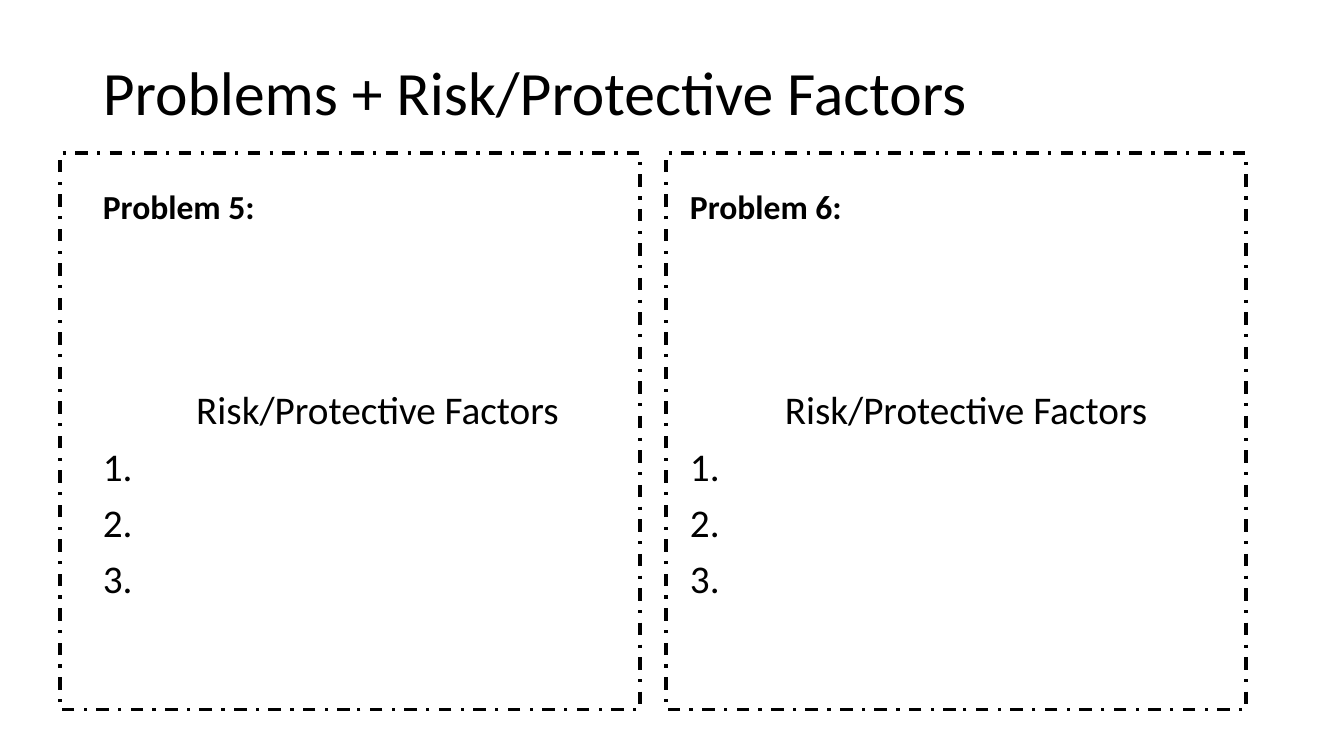
from lxml import etree
from pptx import Presentation
from pptx.dml.color import RGBColor
from pptx.enum.dml import MSO_LINE
from pptx.enum.shapes import MSO_SHAPE
from pptx.enum.text import MSO_ANCHOR, PP_ALIGN
from pptx.oxml.ns import qn
from pptx.util import Emu, Pt

RECT = MSO_SHAPE.RECTANGLE
DASH_DOT = MSO_LINE.DASH_DOT
TOP, MIDDLE = MSO_ANCHOR.TOP, MSO_ANCHOR.MIDDLE
LEFT, CENTER = PP_ALIGN.LEFT, PP_ALIGN.CENTER
PX = 914400 / 100.8
BLACK = "000000"
NUMBER_INDENT = 56


def px(*lengths):
    return [Emu(round(n * PX)) for n in lengths]


def add_text(box, lines, size, bold=False, align=LEFT, anchor=TOP, before=10):
    tf = s.shapes.add_textbox(*px(*box)).text_frame
    tf.word_wrap = True
    tf.vertical_anchor = anchor
    tf.text = "\n".join(lines)
    for p in tf.paragraphs:
        p.alignment = align
        p.line_spacing = 0.9
        p.space_before = Pt(before)
        p.font.name = "Calibri"
        p.font.size = Pt(size)
        p.font.bold = bold
        p.font.color.rgb = RGBColor.from_string(BLACK)
    return tf


prs = Presentation()
prs.slide_width, prs.slide_height = px(1344, 756)
s = prs.slides.add_slide(prs.slide_layouts[6])

add_text((93, 23, 1159, 146), ["Problems + Risk/Protective Factors"], 44,
         anchor=MIDDLE, before=0)

columns = [("Problem 5:", 93, 569, 60), ("Problem 6:", 680, 572, 666)]
for heading, left, width, frame_left in columns:
    add_text((left, 185, width, 201), [heading], 24, bold=True)

    tf = add_text((left, 386, width, 296),
                  ["Risk/Protective Factors", " ", " ", " "], 28, align=CENTER)
    for p in tf.paragraphs[1:]:
        p.alignment = LEFT
        pPr = p._p.get_or_add_pPr()
        indent = px(NUMBER_INDENT)[0]
        pPr.set("marL", str(indent))
        pPr.set("indent", str(-indent))
        number = etree.Element(qn("a:buAutoNum"), type="arabicPeriod")
        pPr.find(qn("a:defRPr")).addprevious(number)

    sp = s.shapes.add_shape(RECT, *px(frame_left, 153, 580, 557))
    sp.shadow.inherit = False
    sp.fill.background()
    sp.line.color.rgb = RGBColor.from_string(BLACK)
    sp.line.width = Pt(2.25)
    sp.line.dash_style = DASH_DOT

prs.save("out.pptx")
